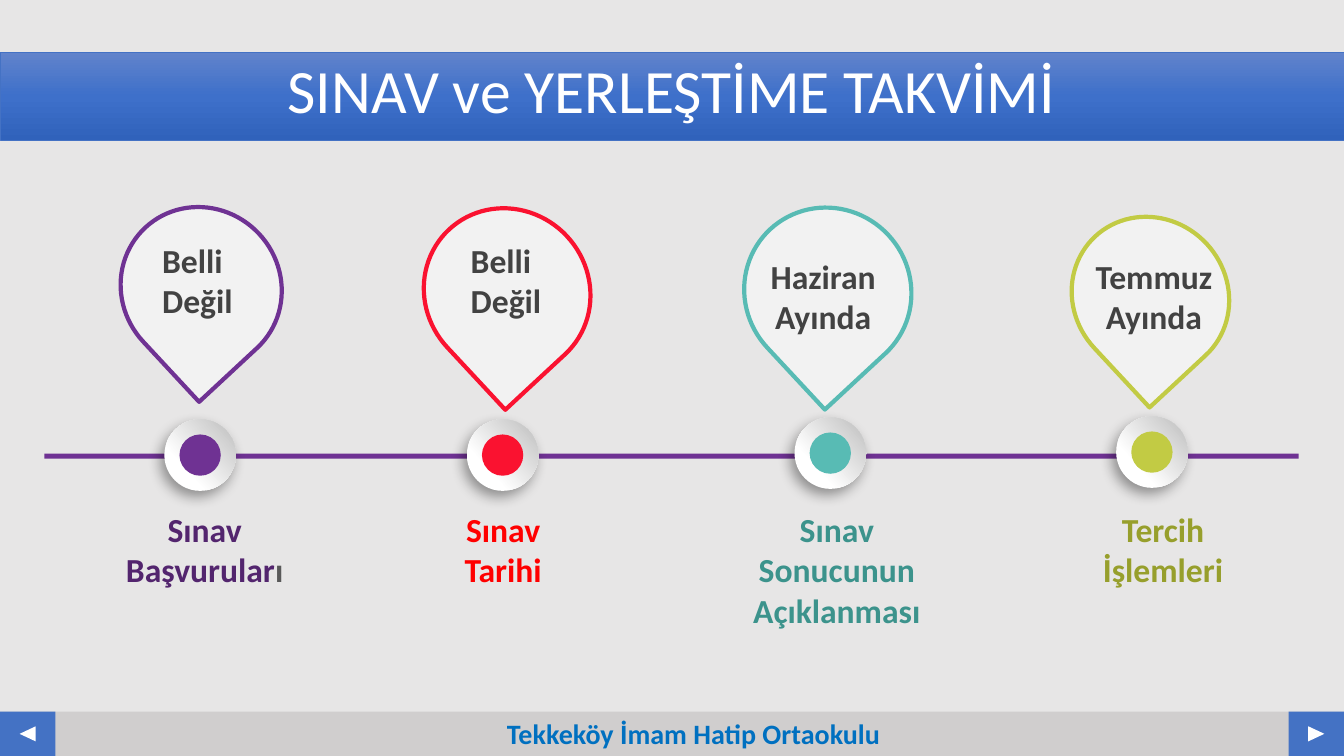
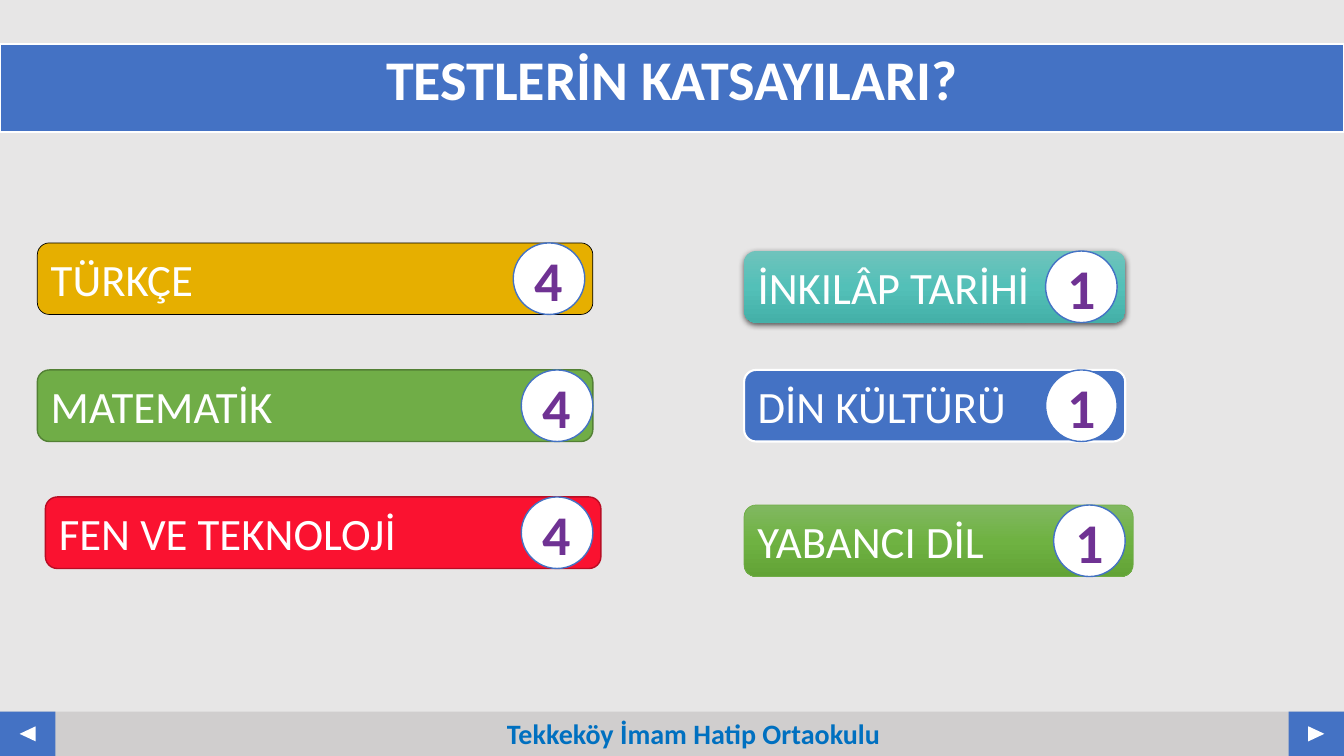
from lxml import etree
from pptx import Presentation
from pptx.dml.color import RGBColor
from pptx.enum.shapes import MSO_SHAPE
from pptx.enum.text import MSO_ANCHOR, PP_ALIGN
from pptx.oxml.ns import qn
from pptx.util import Inches, Pt

RECT = MSO_SHAPE.RECTANGLE
OVAL = MSO_SHAPE.OVAL
TEARDROP = MSO_SHAPE.TEAR
TRIANGLE = MSO_SHAPE.ISOSCELES_TRIANGLE
PILL = MSO_SHAPE.FLOWCHART_ALTERNATE_PROCESS
LEFT, CENTER = PP_ALIGN.LEFT, PP_ALIGN.CENTER
TOP, MIDDLE = MSO_ANCHOR.TOP, MSO_ANCHOR.MIDDLE

COLORS = {
    "page": "E7E6E6", "footer": "D0CECE", "blue": "4472C4", "school": "0070C0",
    "white": "FFFFFF", "black": "000000", "pin": "F2F2F2", "ink": "424242",
    "gray": "595959", "purple": "6F3293", "red": "FA1230", "teal": "58BBB4",
    "lime": "C2CB44", "purple_text": "53256E", "red_text": "FF0000",
    "teal_text": "3C938C", "lime_text": "979F2C", "gold": "E6AF00",
    "green": "70AD47", "green_edge": "538035", "red_edge": "B90D24",
}
GRADIENTS = {
    "blue_fade": (90, [(0, "6183CB"), (50, "3E70CA"), (100, "3062BB")]),
    "teal_fade": (90, [(0, "6FC3BC"), (50, "53C0B8"), (100, "44B0A8")]),
    "green_fade": (90, [(0, "81B861"), (50, "6FB242"), (100, "62A336")]),
    "silver": (318, [(29, "FFFFFF"), (98, "BFBFBF")]),
}
RING_SHADOW = (39, 10, 5, 123)
PILL_SHADOW = (63, 4.5, 1.5, 90)


def add_color(parent, color):
    return etree.SubElement(parent, qn("a:srgbClr"), val=color)


class Deck:
    font = "Calibri"
    width, height = 13.33, 7.5

    def __init__(self):
        self.prs = Presentation()
        self.prs.slide_width = Inches(self.width)
        self.prs.slide_height = Inches(self.height)
        self.slide = None

    def color(self, name):
        return RGBColor.from_string(COLORS[name])

    def new_slide(self, title, top, size, fill, line, bold=False):
        self.slide = self.prs.slides.add_slide(self.prs.slide_layouts[6])
        bg = self.slide.background.fill
        bg.solid()
        bg.fore_color.rgb = self.color("page")
        self.footer()
        s = self.shape(RECT, 0, top, self.width, 0.87, fill, line)
        s.text_frame.margin_top = Inches(0.08)
        self.set_text(s, [title], size, "white", bold, CENTER, TOP)
        s.text_frame.paragraphs[0].line_spacing = 0.9

    def footer(self):
        top, h, button = 7.06, 0.44, 0.55
        self.shape(RECT, 0, top, self.width, h, "footer")
        for x, turn in ((0, 270), (self.width - button, 90)):
            self.shape(RECT, x, top, button, h, "blue")
            s = self.shape(TRIANGLE, x + 0.2, top + 0.14, 0.15, 0.16, "white")
            s.rotation = turn
        self.text(4.93, top, 4.02, h, ["Tekkeköy İmam Hatip Ortaokulu"],
                  20, "school", LEFT)

    def gradient(self, s, name):
        angle, stops = GRADIENTS[name]
        s.fill.background()
        spPr = s._element.spPr
        grad = etree.Element(qn("a:gradFill"), rotWithShape="1")
        spPr.replace(spPr.find(qn("a:noFill")), grad)
        gsLst = etree.SubElement(grad, qn("a:gsLst"))
        for pos, color in stops:
            add_color(etree.SubElement(gsLst, qn("a:gs"), pos=str(pos * 1000)), color)
        etree.SubElement(grad, qn("a:lin"), ang=str(angle * 60000), scaled="0")

    def cast_shadow(self, s, alpha, blur, dist, angle):
        effects = s._element.spPr.find(qn("a:effectLst"))
        shadow = etree.SubElement(
            effects, qn("a:outerShdw"), blurRad=str(Pt(blur)), dist=str(Pt(dist)),
            dir=str(angle * 60000), algn="ctr", rotWithShape="0")
        color = add_color(shadow, COLORS["black"])
        etree.SubElement(color, qn("a:alpha"), val=str(alpha * 1000))

    def shape(self, kind, x, y, w, h, fill, line=None, shadow=None):
        s = self.slide.shapes.add_shape(kind, Inches(x), Inches(y), Inches(w), Inches(h))
        s.shadow.inherit = False
        if fill in GRADIENTS:
            self.gradient(s, fill)
        else:
            s.fill.solid()
            s.fill.fore_color.rgb = self.color(fill)
        if line:
            s.line.color.rgb = self.color(line[0])
            s.line.width = Pt(line[1])
        else:
            s.line.fill.background()
        if shadow:
            self.cast_shadow(s, *shadow)
        return s

    def set_text(self, s, lines, size, color, bold, align, anchor):
        tf = s.text_frame
        tf.text = "\n".join(lines)
        tf.vertical_anchor = anchor
        for p in tf.paragraphs:
            p.alignment = align
            for r in p.runs:
                self.style_run(r, size, color, bold)

    def style_run(self, r, size, color, bold):
        r.font.name = self.font
        r.font.size = Pt(size)
        r.font.bold = bold
        r.font.color.rgb = self.color(color)

    def text(self, x, y, w, h, lines, size, color, align=CENTER, wrap=True):
        s = self.slide.shapes.add_textbox(Inches(x), Inches(y), Inches(w), Inches(h))
        s.text_frame.word_wrap = wrap
        self.set_text(s, lines, size, color, True, align, TOP)
        return s

    def marker(self, x, y, color):
        self.shape(OVAL, x, y, 0.71, 0.71, "silver", shadow=RING_SHADOW)
        self.shape(OVAL, x + 0.15, y + 0.15, 0.41, 0.41, color)

    def pin(self, box, color, date_box, lines, align):
        s = self.shape(TEARDROP, *box, "pin", (color, 3))
        s.rotation = 137.1
        self.text(*date_box, 0.91, lines, 24, "ink", align, wrap=False)

    def label(self, x, w, text, color, tail=""):
        s = self.text(x, 5, w, 0.91, [text], 24, color)
        if tail:
            r = s.text_frame.paragraphs[0].add_run()
            r.text = tail
            self.style_run(r, 24, "gray", True)

    def subject(self, x, y, w, name, weight, badge_x, fill, line, shadow=None):
        s = self.shape(PILL, x, y, w, 0.71, fill, line, shadow)
        self.set_text(s, [name], 32, "white", False, LEFT, MIDDLE)
        s = self.shape(OVAL, badge_x, y, 0.71, 0.71, "white", ("blue", 1))
        self.set_text(s, [weight], 40, "purple", True, CENTER, MIDDLE)


def calendar(deck):
    deck.new_slide("SINAV ve YERLEŞTİME TAKVİMİ", 0.52, 44, "blue_fade", ("blue", 0.5))
    deck.shape(RECT, 0.44, 4.5, 12.44, 0.05, "purple")
    markers = [(1.63, 4.16, "purple"), (4.63, 4.16, "red"),
               (7.88, 4.14, "teal"), (11.07, 4.13, "lime")]
    pins = [
        ((1.21, 2.04, 1.57, 1.63), (1.51, 2.33, 0.91), ["Belli", "Değil"], LEFT),
        ((4.22, 2.05, 1.62, 1.69), (4.57, 2.33, 0.91), ["Belli", "Değil"], LEFT),
        ((7.39, 2.05, 1.64, 1.68), (7.46, 2.49, 1.41), ["Haziran", "Ayında"], CENTER),
        ((10.65, 2.13, 1.52, 1.61), (10.76, 2.49, 1.37), ["Temmuz", "Ayında"], CENTER),
    ]
    labels = [
        (1.08, 1.9, "Sınav Başvurular", "purple_text", "ı"),
        (4.15, 1.68, "Sınav Tarihi", "red_text"),
        (7.22, 2.16, "Sınav Sonucunun Açıklanması", "teal_text"),
        (10.76, 1.55, "Tercih İşlemleri", "lime_text"),
    ]
    for (x, y, color), (box, date_box, lines, align), label in zip(markers, pins, labels):
        deck.marker(x, y, color)
        deck.pin(box, color, date_box, lines, align)
        deck.label(*label)


def weights(deck):
    deck.new_slide("TESTLERİN KATSAYILARI?", 0.44, 40, "blue", ("white", 1.5), bold=True)
    subjects = [
        (0.37, 2.41, 5.51, "TÜRKÇE", "4", 5.09, "gold", ("black", 0.5)),
        (0.37, 3.67, 5.51, "MATEMATİK", "4", 5.17, "green", ("green_edge", 1)),
        (0.45, 4.93, 5.51, "FEN VE TEKNOLOJİ", "4", 5.17, "red", ("red_edge", 1)),
        (7.38, 2.49, 3.78, "İNKILÂP TARİHİ", "1", 10.37, "teal_fade", None, PILL_SHADOW),
        (7.38, 3.67, 3.78, "DİN KÜLTÜRÜ", "1", 10.37, "blue", ("white", 1.5)),
        (7.38, 5.01, 3.86, "YABANCI DİL", "1", 10.45, "green_fade", ("green", 0.5)),
    ]
    for subject in subjects:
        deck.subject(*subject)


def main():
    deck = Deck()
    calendar(deck)
    weights(deck)
    deck.prs.save("out.pptx")


if __name__ == "__main__":
    main()
